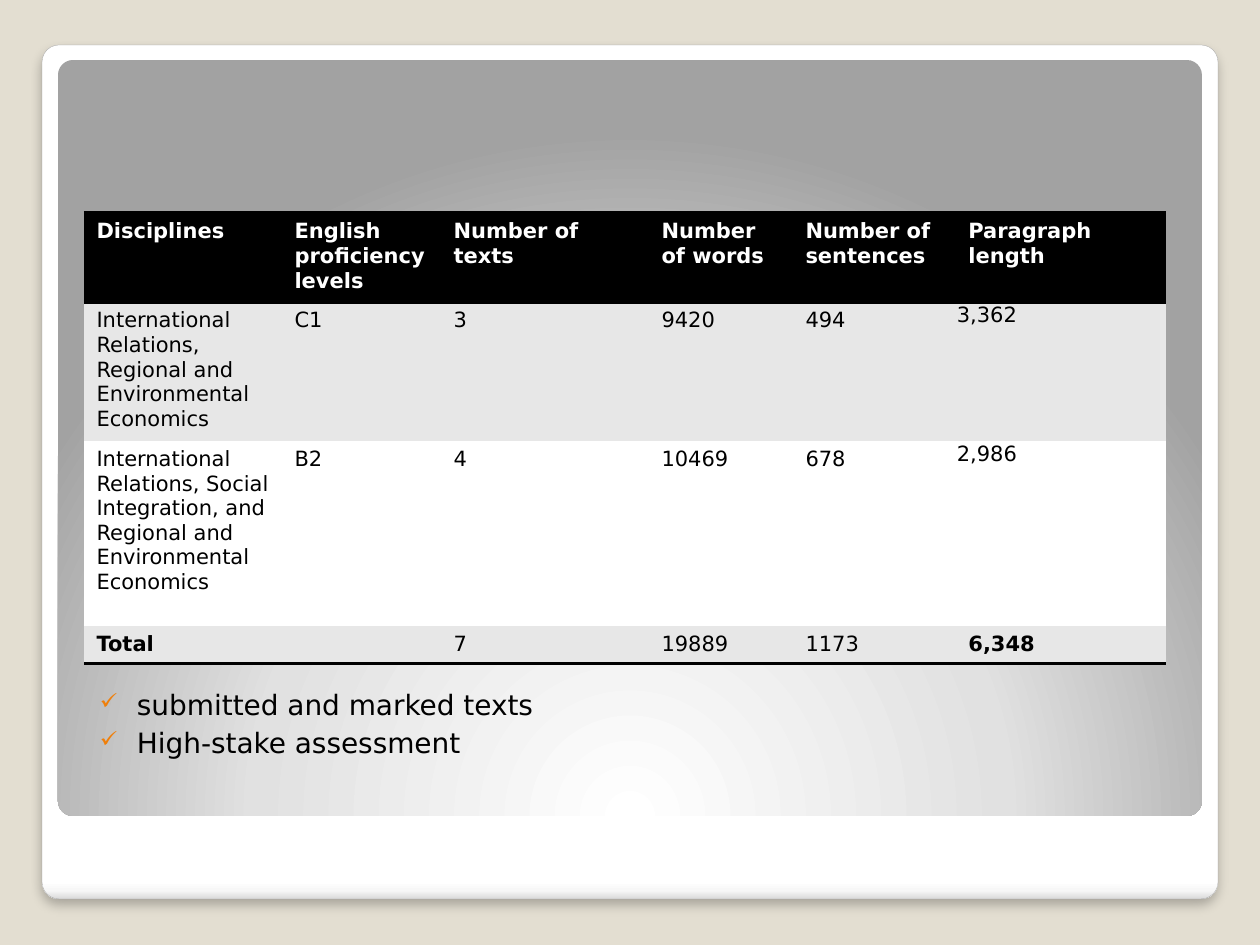
from pptx import Presentation
from pptx.dml.color import RGBColor
from pptx.enum.shapes import MSO_SHAPE
from pptx.oxml import parse_xml
from pptx.oxml.ns import nsdecls, qn
from pptx.util import Pt

# Content
HEADER = ["Disciplines", "English proficiency levels", "Number of texts",
          "Number of words", "Number of sentences", "Paragraph length"]
ROWS = [
    HEADER,
    ["International Relations, Regional and Environmental Economics",
     "C1", "3", "9420", "494", "3,362"],
    ["International Relations, Social Integration, and Regional and "
     "Environmental Economics", "B2", "4", "10469", "678", "2,986"],
    ["Total", "", "7", "19889", "1173", "6,348"],
]
POINTS = ["submitted and marked texts", "High-stake assessment"]

# Format
FONT = "DejaVu Sans"
BLACK = RGBColor(0x00, 0x00, 0x00)
WHITE = RGBColor(0xFF, 0xFF, 0xFF)
BAND = RGBColor(0xE7, 0xE7, 0xE7)
BEIGE = RGBColor(0xE3, 0xDE, 0xD1)
FRAME_LINE = RGBColor(0xA4, 0xA4, 0xA4)
BULLET = RGBColor(0xF0, 0x7F, 0x09)
ROW_FILLS = [BLACK, BAND, WHITE, BAND]
BOLD_CELLS = {"Total", "6,348", *HEADER}
ROW_BORDERS = {0: ("T", "B"), len(ROWS) - 1: ("B",)}
NO_STYLE = "{2D5ABB26-0587-4C30-8999-92F81FD0307C}"

# Layout in px
PX = 914400 / 126
FRAME_BOX = (42, 45, 1176, 854)
PANEL_BOX = (58, 60, 1144, 756)
TABLE_LEFT, TABLE_TOP = 84, 213
COLUMN_WIDTHS = [198, 159, 208, 144, 163, 210]
ROW_HEIGHTS = [89, 135, 185, 36]
POINTS_BOX = (100, 688, 1060, 80)
POINT_INDENT = 37
TIGHT_MARGIN = 1


def px(length):
    return round(length * PX)


def format_font(font, size, color=BLACK, bold=False):
    for name, value in {"name": FONT, "size": Pt(size), "bold": bold}.items():
        setattr(font, name, value)
    font.color.rgb = color


def add_panel(slide, box, stops, direction):
    shape = slide.shapes.add_shape(MSO_SHAPE.ROUNDED_RECTANGLE, *map(px, box))
    shape.adjustments[0] = 0.02
    shape.shadow.inherit = False
    shape.line.fill.background()
    shape.fill.background()
    stop_list = "".join(f'<a:gs pos="{position * 1000}"><a:srgbClr val="{color}"/></a:gs>'
                        for position, color in stops)
    gradient = parse_xml(f'<a:gradFill {nsdecls("a")} rotWithShape="1">'
                         f'<a:gsLst>{stop_list}</a:gsLst>{direction}</a:gradFill>')
    properties = shape._element.spPr
    properties.replace(properties.find(qn("a:noFill")), gradient)
    return shape


def add_border(cell, side):
    cell._tc.get_or_add_tcPr().append(parse_xml(
        f'<a:ln{side} {nsdecls("a")} w="{Pt(2)}"><a:solidFill>'
        f'<a:srgbClr val="{BLACK}"/></a:solidFill></a:ln{side}>'))


def fill_cell(cell, text, row, column):
    for side in ROW_BORDERS.get(row, ()):
        add_border(cell, side)
    cell.fill.solid()
    cell.fill.fore_color.rgb = ROW_FILLS[row]
    paragraph = cell.text_frame.paragraphs[0]
    if text:
        run = paragraph.add_run()
        run.text = text
        format_font(run.font, 12, WHITE if row == 0 else BLACK, text in BOLD_CELLS)
    else:
        paragraph._p.get_or_add_endParaRPr().set("sz", "1200")
    # The two paragraph lengths sit tight in their cells
    if column == len(HEADER) - 1 and row in (1, 2):
        for side in ("left", "top", "right"):
            setattr(cell, f"margin_{side}", px(TIGHT_MARGIN))
        cell.margin_bottom = 0


def add_results_table(slide):
    frame = slide.shapes.add_table(
        len(ROWS), len(HEADER), px(TABLE_LEFT), px(TABLE_TOP),
        px(sum(COLUMN_WIDTHS)), px(sum(ROW_HEIGHTS)))
    table = frame.table
    table.horz_banding = False
    table._tbl.tblPr.find(qn("a:tableStyleId")).text = NO_STYLE
    for column, width in zip(table.columns, COLUMN_WIDTHS):
        column.width = px(width)
    for row, height in zip(table.rows, ROW_HEIGHTS):
        row.height = px(height)
    for i, texts in enumerate(ROWS):
        for j, text in enumerate(texts):
            fill_cell(table.cell(i, j), text, i, j)


def add_points(slide):
    text_frame = slide.shapes.add_textbox(*map(px, POINTS_BOX)).text_frame
    text_frame.word_wrap = True
    for side in ("left", "top", "right", "bottom"):
        setattr(text_frame, f"margin_{side}", 0)
    for i, text in enumerate(POINTS):
        paragraph = text_frame.add_paragraph() if i else text_frame.paragraphs[0]
        paragraph.space_before = Pt(2.5)
        run = paragraph.add_run()
        run.text = text
        format_font(run.font, 16)
        properties = paragraph._p.get_or_add_pPr()
        properties.set("marL", str(px(POINT_INDENT)))
        properties.set("indent", str(-px(POINT_INDENT)))
        for tag in (f'<a:buClr {nsdecls("a")}><a:srgbClr val="{BULLET}"/></a:buClr>',
                    f'<a:buSzPct {nsdecls("a")} val="80000"/>',
                    f'<a:buChar {nsdecls("a")} char="✓"/>'):
            properties.append(parse_xml(tag))


def main():
    presentation = Presentation()
    presentation.slide_width, presentation.slide_height = px(1260), px(945)
    slide = presentation.slides.add_slide(presentation.slide_layouts[6])
    slide.background.fill.solid()
    slide.background.fill.fore_color.rgb = BEIGE

    # White frame with a soft shadow
    frame = add_panel(slide, FRAME_BOX,
                      [(0, WHITE), (98, WHITE), (99, "F7F7F7"), (100, "DADADA")],
                      '<a:lin ang="5400000" scaled="0"/>')
    frame.line.color.rgb = FRAME_LINE
    frame.line.width = Pt(0.16)
    frame._element.spPr.find(qn("a:effectLst")).append(parse_xml(
        f'<a:outerShdw {nsdecls("a")} blurRad="{Pt(6)}" dist="{Pt(4)}" dir="5400000" '
        f'algn="tl" rotWithShape="0"><a:srgbClr val="{BLACK}"><a:alpha val="25000"/>'
        '</a:srgbClr></a:outerShdw>'))

    # Grey panel lit from below
    add_panel(slide, PANEL_BOX, [(0, WHITE), (55, "E1E1E1"), (100, "A2A2A2")],
              '<a:path path="circle"><a:fillToRect l="50000" t="175000" '
              'r="50000" b="-75000"/></a:path>')

    add_points(slide)
    add_results_table(slide)
    presentation.save("out.pptx")


if __name__ == "__main__":
    main()
